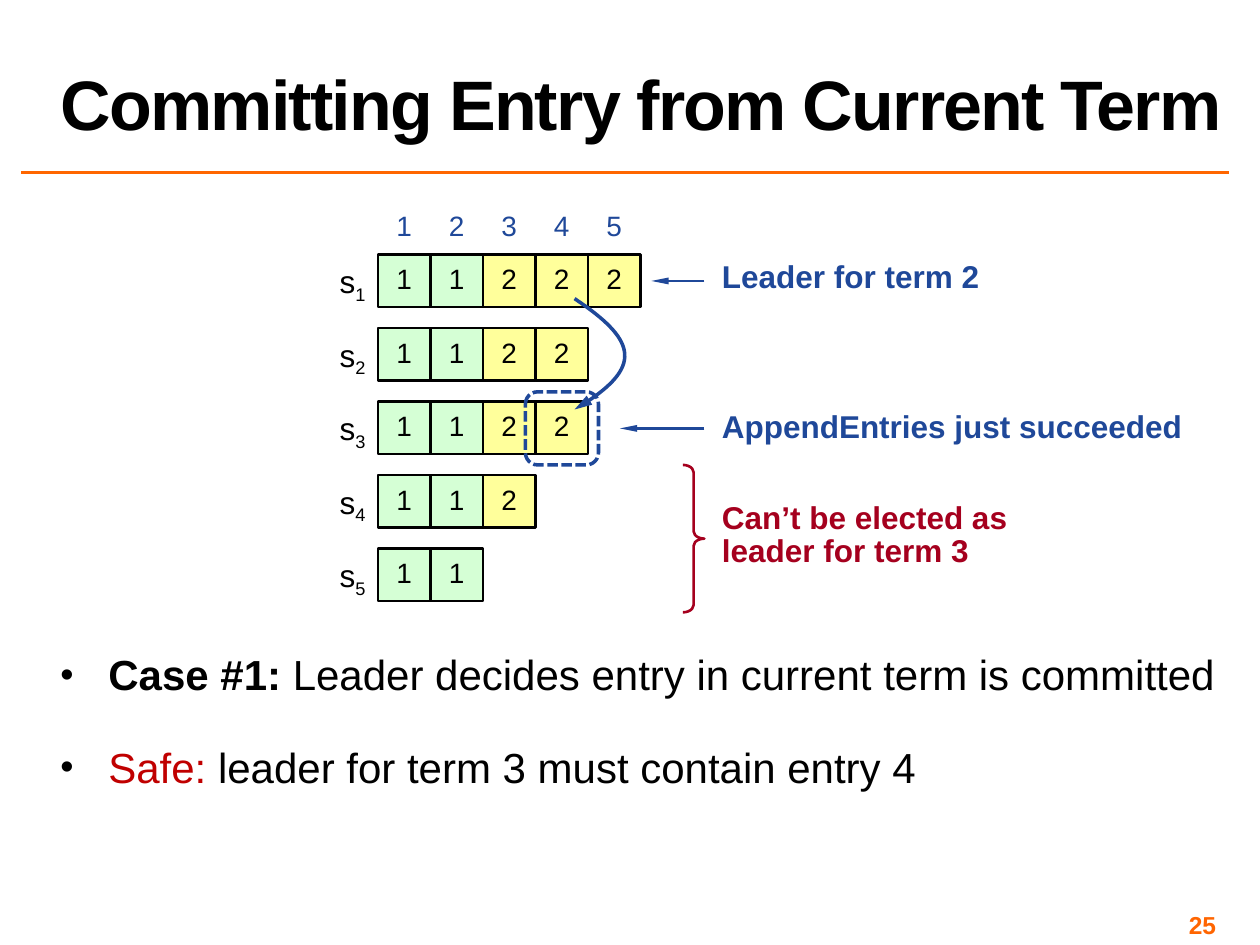
"""Build a slide showing when a replicated log entry of the current term is committed."""
from lxml import etree
from pptx import Presentation
from pptx.dml.color import RGBColor
from pptx.enum.dml import MSO_LINE
from pptx.enum.shapes import MSO_CONNECTOR, MSO_SHAPE
from pptx.enum.text import MSO_ANCHOR, MSO_AUTO_SIZE, PP_ALIGN
from pptx.oxml.ns import qn
from pptx.util import Inches, Pt

rgb = RGBColor.from_string
BLACK, BLUE, RED, ORANGE = "000000", "1F4899", "A5001E", "FF6600"
GREEN, YELLOW = "D5FFD5", "FFFF9B"


def write_text(shape, text, size, color, bold=False, align=PP_ALIGN.LEFT, spacing=None, inset=0):
    """Fill a shape with one formatted paragraph and return that paragraph."""
    frame = shape.text_frame
    frame.word_wrap = True
    frame.margin_left = frame.margin_right = Inches(inset)
    frame.margin_top = frame.margin_bottom = Inches(inset / 2)
    frame.text = text
    paragraph = frame.paragraphs[0]
    paragraph.alignment = align
    paragraph.line_spacing = spacing
    for run in paragraph.runs:
        run.font.name, run.font.size, run.font.bold = "Arial", Pt(size), bold
        run.font.color.rgb = rgb(color)
    return paragraph


def style_line(shape, color, width, head_width=None):
    """Set a line's colour and width, drop its shadow and add an optional arrowhead."""
    shape.line.color.rgb = rgb(color)
    shape.line.width = Pt(width)
    properties = shape._element.spPr
    if head_width:
        etree.SubElement(properties.find(qn("a:ln")), qn("a:tailEnd"),
                         type="triangle", w=head_width, len="lg")
    etree.SubElement(properties, qn("a:effectLst"))


presentation = Presentation()
presentation.slide_width, presentation.slide_height = Inches(10), Inches(7.5)
slide = presentation.slides.add_slide(presentation.slide_layouts[1])
shapes = slide.shapes

rule = shapes.add_connector(MSO_CONNECTOR.STRAIGHT, Inches(0.17), Inches(1.37), Inches(9.75), Inches(1.37))
style_line(rule, ORANGE, 2)

title = shapes.title
title.left, title.top, title.width, title.height = Inches(0.38), Inches(0.02), Inches(9.62), Inches(1.17)
paragraph = write_text(title, "Committing Entry from Current Term", 40, BLACK, True, spacing=0.8, inset=0.1)
paragraph.runs[0].font._element.set("spc", "-100")
title.text_frame.vertical_anchor = MSO_ANCHOR.BOTTOM
title.text_frame.auto_size = MSO_AUTO_SIZE.NONE

body = slide.placeholders[1]
body.left, body.top, body.width, body.height = Inches(0.38), Inches(5.1), Inches(9.62), Inches(2.09)
body.text_frame.auto_size = MSO_AUTO_SIZE.NONE
points = [
    ("Case #1: ", "Leader decides entry in current term is committed", BLACK, True, 12),
    ("Safe: ", "leader for term 3 must contain entry 4", "C00000", False, 24),
]
body.text_frame.text = "\n".join(point[0] for point in points)
for paragraph, (lead, rest, color, bold, space) in zip(body.text_frame.paragraphs, points):
    paragraph.space_before = Pt(space)
    paragraph.add_run().text = rest
    for run, run_color, run_bold in zip(paragraph.runs, (color, BLACK), (bold, False)):
        run.font.name, run.font.size, run.font.bold = "Arial", Pt(24), run_bold
        run.font.color.rgb = rgb(run_color)
    properties = paragraph._p.get_or_add_pPr()
    properties.set("marL", str(Inches(0.38)))
    properties.set("indent", str(-Inches(0.38)))
    bullet_color = etree.SubElement(properties, qn("a:buClr"))
    etree.SubElement(bullet_color, qn("a:srgbClr"), val=BLACK)
    etree.SubElement(properties, qn("a:buSzPct"), val="90000")
    etree.SubElement(properties, qn("a:buFont"), typeface="Arial")
    etree.SubElement(properties, qn("a:buChar"), char="•")

number = shapes.add_textbox(Inches(7.42), Inches(7.17), Inches(2.33), Inches(0.23))
write_text(number, "25", 14, "FF6501", True, PP_ALIGN.RIGHT, inset=0.1)

log_left, log_top = Inches(3), Inches(2.02)
cell, row_pitch = Inches(5) // 12, Inches(7) // 12
logs = ["11222", "1122", "1122", "112", "11"]
for column in range(5):
    index = shapes.add_textbox(log_left + column * cell, Inches(1.61), cell, Inches(0.37))
    write_text(index, str(column + 1), 16, BLUE, align=PP_ALIGN.CENTER, inset=0.1)

for row, terms in enumerate(logs):
    top = log_top + row * row_pitch
    server = shapes.add_textbox(Inches(2.59), top + Inches(0.06), cell, Inches(0.3))
    paragraph = write_text(server, "s", 18, BLACK, align=PP_ALIGN.CENTER)
    subscript = paragraph.add_run()
    subscript.text = str(row + 1)
    subscript.font.name, subscript.font.size = "Arial", Pt(18)
    subscript.font.color.rgb = rgb(BLACK)
    subscript.font._element.set("baseline", "-25000")
    for column, term in enumerate(terms):
        entry = shapes.add_shape(MSO_SHAPE.RECTANGLE, log_left + column * cell, top, cell, cell)
        entry.fill.solid()
        entry.fill.fore_color.rgb = rgb(GREEN if term == "1" else YELLOW)
        style_line(entry, BLACK, 1.5)
        write_text(entry, term, 16, BLACK, align=PP_ALIGN.CENTER, spacing=Pt(17))
        entry.text_frame.vertical_anchor = MSO_ANCHOR.MIDDLE

notes = [
    ("Leader for term 2", 2.08, 2.77, 0.27, BLUE),
    ("AppendEntries just succeeded", 3.27, 4.19, 0.27, BLUE),
    ("Can’t be elected as\vleader for term 3", 3.99, 2.77, 0.53, RED),
]
for text, top, width, height, color in notes:
    note = shapes.add_textbox(Inches(5.73), Inches(top), Inches(width), Inches(height))
    write_text(note, text, 18, color, True, spacing=Pt(19))

for end, y in [(5.17, 2.23), (4.92, 3.4)]:
    arrow = shapes.add_connector(MSO_CONNECTOR.STRAIGHT, Inches(5.59), Inches(y), Inches(end), Inches(y))
    style_line(arrow, BLUE, 1.5, "sm")

brace = shapes.add_shape(MSO_SHAPE.RIGHT_BRACE, Inches(5.42), Inches(3.69), Inches(0.17), Inches(1.17))
brace.adjustments[0] = 0.34
brace.fill.background()
style_line(brace, RED, 1.5)

highlight = shapes.add_shape(MSO_SHAPE.ROUNDED_RECTANGLE, Inches(4.17), Inches(3.11), Inches(0.58), Inches(0.58))
highlight.fill.background()
style_line(highlight, BLUE, 2)
highlight.line.dash_style = MSO_LINE.SQUARE_DOT

start_x, start_y = Inches(4.56), Inches(2.37)
builder = shapes.build_freeform(start_x, start_y)
builder.add_line_segments([(Inches(4.95), Inches(2.82)), (start_x, Inches(3.25))], close=False)
replication = builder.convert_to_shape()
replication.fill.background()
style_line(replication, BLUE, 2, "med")
outline = replication._element.find(".//" + qn("a:path"))
for segment in outline.findall(qn("a:lnTo")):
    outline.remove(segment)
curve = etree.SubElement(outline, qn("a:cubicBezTo"))
for x, y in [(5.04, 2.69), (5.11, 2.93), (4.56, 3.25)]:
    etree.SubElement(curve, qn("a:pt"), x=str(Inches(x) - start_x), y=str(Inches(y) - start_y))

presentation.save("out.pptx")
